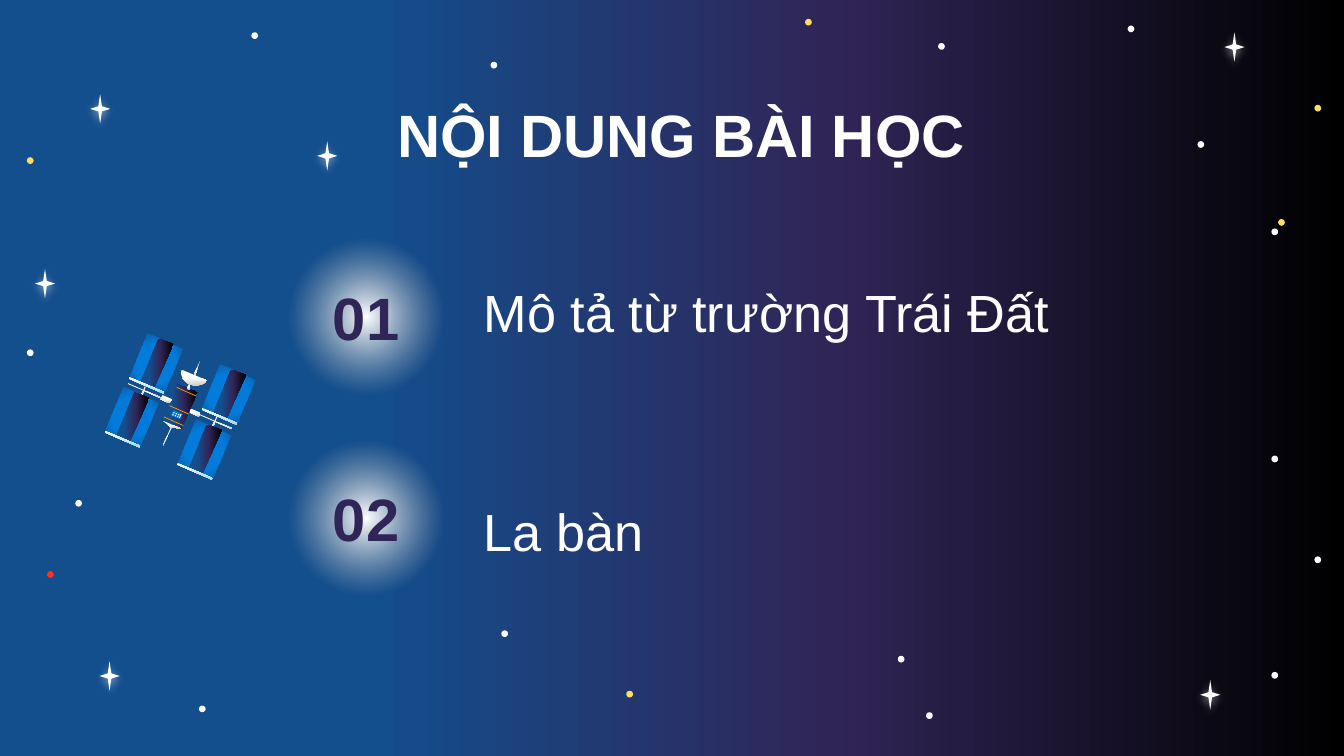
from pptx import Presentation
from pptx.dml.color import RGBColor
from pptx.enum.shapes import MSO_SHAPE
from pptx.enum.text import MSO_ANCHOR, MSO_AUTO_SIZE, PP_ALIGN
from pptx.oxml import parse_xml
from pptx.oxml.ns import nsdecls, qn
from pptx.util import Inches, Pt

WHITE, YELLOW, RED, ORANGE, PURPLE = "FFFFFF", "FFDD5E", "FF3121", "FC9D03", "302557"
LINEAR = '<a:lin ang="{}" scaled="0"/>'
RADIAL = '<a:path path="circle"><a:fillToRect l="50000" t="50000" r="50000" b="50000"/></a:path>'
NIGHT = ([(0, "134E8D", 100), (28, "134E8D", 100), (62, PURPLE, 100), (100, "000000", 100)], LINEAR.format(0))
METAL = ([(0, WHITE, 100), (50, WHITE, 100), (100, "CCCCCC", 100)], LINEAR.format(5400000))
ICE = ([(0, WHITE, 100), (100, "9ED9F8", 100)], LINEAR.format(5400000))
CELL = ([(0, "027BDA", 100), (50, "027BDA", 100), (100, "134E8D", 100)], RADIAL)
GLOW = ([(0, WHITE, 100), (67, "B9B9B9", 0), (100, "737373", 0)], RADIAL)


def paint(item, element, color):
    item.fill.solid()
    if isinstance(color, str):
        item.fill.fore_color.rgb = RGBColor.from_string(color)
    else:
        stops, direction = color
        stop_xml = "".join(
            f'<a:gs pos="{position * 1000}"><a:srgbClr val="{tone}">'
            f'<a:alpha val="{opacity * 1000}"/></a:srgbClr></a:gs>'
            for position, tone, opacity in stops)
        solid = element.find(".//" + qn("a:solidFill"))
        solid.getparent().replace(solid, parse_xml(
            f'<a:gradFill {nsdecls("a")} rotWithShape="1"><a:gsLst>{stop_xml}</a:gsLst>{direction}</a:gradFill>'))
    if hasattr(item, "line"):
        item.line.fill.background()
        item.shadow.inherit = False


def draw(shapes, outline, color, left=0, top=0, width=1, height=1):
    if isinstance(outline, list):
        points = [(round((left + x) * 10), round((top + y) * 10)) for x, y in outline]
        builder = shapes.build_freeform(*points[0], scale=unit / 10)
        builder.add_line_segments(points[1:], close=True)
        shape = builder.convert_to_shape()
    else:
        shape = shapes.add_shape(outline, *(round(length * unit) for length in (left, top, width, height)))
    paint(shape, shape.element.spPr, color)
    return shape


presentation = Presentation()
presentation.slide_width = Inches(10)
presentation.slide_height = presentation.slide_width * 9 // 16
unit = presentation.slide_width // 1000
slide = presentation.slides.add_slide(presentation.slide_layouts[5])
paint(slide.background, slide.element, NIGHT)

dots = {
    WHITE: [(148, 525), (56, 372), (20, 260), (689, 530), (187, 24), (978, 414), (946, 339),
            (839, 19), (946, 500), (946, 170), (698, 32), (365, 46), (891, 105), (373, 469), (668, 488)],
    YELLOW: [(20, 117), (466, 514), (978, 78), (599, 14), (951, 163)],
    RED: [(35, 425)],
}
for color, places in dots.items():
    for left, top in places:
        draw(slide.shapes, MSO_SHAPE.OVAL, color, left, top, 5, 5)

for left, top in [(26, 200), (74, 492), (67, 70), (893, 506), (911, 24), (236, 105)]:
    star = draw(slide.shapes, MSO_SHAPE.STAR_4_POINT, WHITE, left, top, 15, 22)
    star.adjustments[0] = 0.125
    star.element.spPr.find(qn("a:effectLst")).append(parse_xml(
        f'<a:outerShdw {nsdecls("a")} blurRad="{Pt(4.5)}" dist="{Pt(1.5)}" dir="5400000" rotWithShape="0">'
        f'<a:srgbClr val="{WHITE}"><a:alpha val="50000"/></a:srgbClr></a:outerShdw>'))

title = slide.shapes.title
title.left, title.top, title.width, title.height = (length * unit for length in (85, 68, 844, 63))
texts = [(title, "NỘI DUNG BÀI HỌC", 32, WHITE, True)]
topics = [("01", "Mô tả từ trường Trái Đất", 213), ("02", "La bàn", 376)]
for index, (number, topic, topic_top) in enumerate(topics):
    drop = 150 * index
    draw(slide.shapes, MSO_SHAPE.OVAL, GLOW, 211, 174 + drop, 123, 123)
    number_box = slide.shapes.add_textbox(220 * unit, (207 + drop) * unit, 105 * unit, 57 * unit)
    topic_box = slide.shapes.add_textbox(350 * unit, topic_top * unit, 524 * unit, 38 * unit)
    texts += [(number_box, number, 32, PURPLE, True), (topic_box, topic, 28, WHITE, False)]

for box, text, size, color, heading in texts:
    text_frame = box.text_frame
    text_frame.text = text
    text_frame.word_wrap = True
    text_frame.auto_size = MSO_AUTO_SIZE.NONE
    text_frame.vertical_anchor = MSO_ANCHOR.MIDDLE
    text_frame.margin_left = text_frame.margin_right = Inches(0.1)
    text_frame.margin_top = text_frame.margin_bottom = Inches(0.1)
    paragraph = text_frame.paragraphs[0]
    paragraph.alignment = PP_ALIGN.CENTER if heading else PP_ALIGN.LEFT
    font = paragraph.runs[0].font
    font.name, font.size, font.bold = "Arial", Pt(size), heading
    font.color.rgb = RGBColor.from_string(color)

satellite = slide.shapes.add_group_shape().shapes
body_parts = [
    ([(128, 316), (121, 332), (129, 316)], METAL),
    ([(149, 268), (144, 279), (145, 280)], METAL),
    ([(132, 286), (121, 313), (135, 319), (147, 292)], NIGHT),
    ([(121, 313), (127, 318), (135, 319)], METAL),
    ([(129, 305), (127, 309), (134, 312), (136, 308)], "027BDA"),
    ([(142, 304), (141, 307), (148, 310), (149, 307)], METAL),
    ([(121, 294), (119, 297), (126, 300), (128, 297)], METAL),
    ([(141, 285), (139, 289), (141, 290), (142, 286)], METAL),
    ([(135, 275), (134.6, 278), (136, 282), (138, 284), (141, 286), (146, 287),
      (150, 286), (152, 285), (154, 283)], METAL),
]
for outline, color in body_parts:
    draw(satellite, outline, color)

for left, top in [(95, 285), (148, 308)]:
    draw(satellite, [(0, 0), (0, 0.7), (25, 11.5), (25, 10.8)], METAL, left, top)
    draw(satellite, [(13.3, 1.3), (10, 9), (10.8, 9.3), (14, 1.6)], METAL, left, top)

for left, top in [(150, 271), (96, 248), (132, 312), (78, 288)]:
    draw(satellite, [(14, 0), (0, 34), (26, 45), (40, 12)], CELL, left, top)
    draw(satellite, [(22, 4), (8, 37), (18, 42), (33, 8)], NIGHT, left, top)
    draw(satellite, [(0.3, 32.6), (0, 33.8), (26, 45), (26.4, 43.8)], ICE, left, top)

for left, top in [(131.5, 288), (126, 301.5), (122, 310)]:
    draw(satellite, [(0, 0), (0, 0.6), (14.5, 7), (14.5, 6.4)], ORANGE, left, top)

for row in range(2):
    for column in range(3):
        draw(satellite, MSO_SHAPE.OVAL, WHITE,
             128.2 + 1.8 * column + 0.7 * row, 308.2 + 0.7 * column - 1.5 * row, 1, 1)
draw(satellite, [(134.4, 308), (133.2, 311), (133.8, 311.2), (135, 308.3)], WHITE)

presentation.save("out.pptx")
